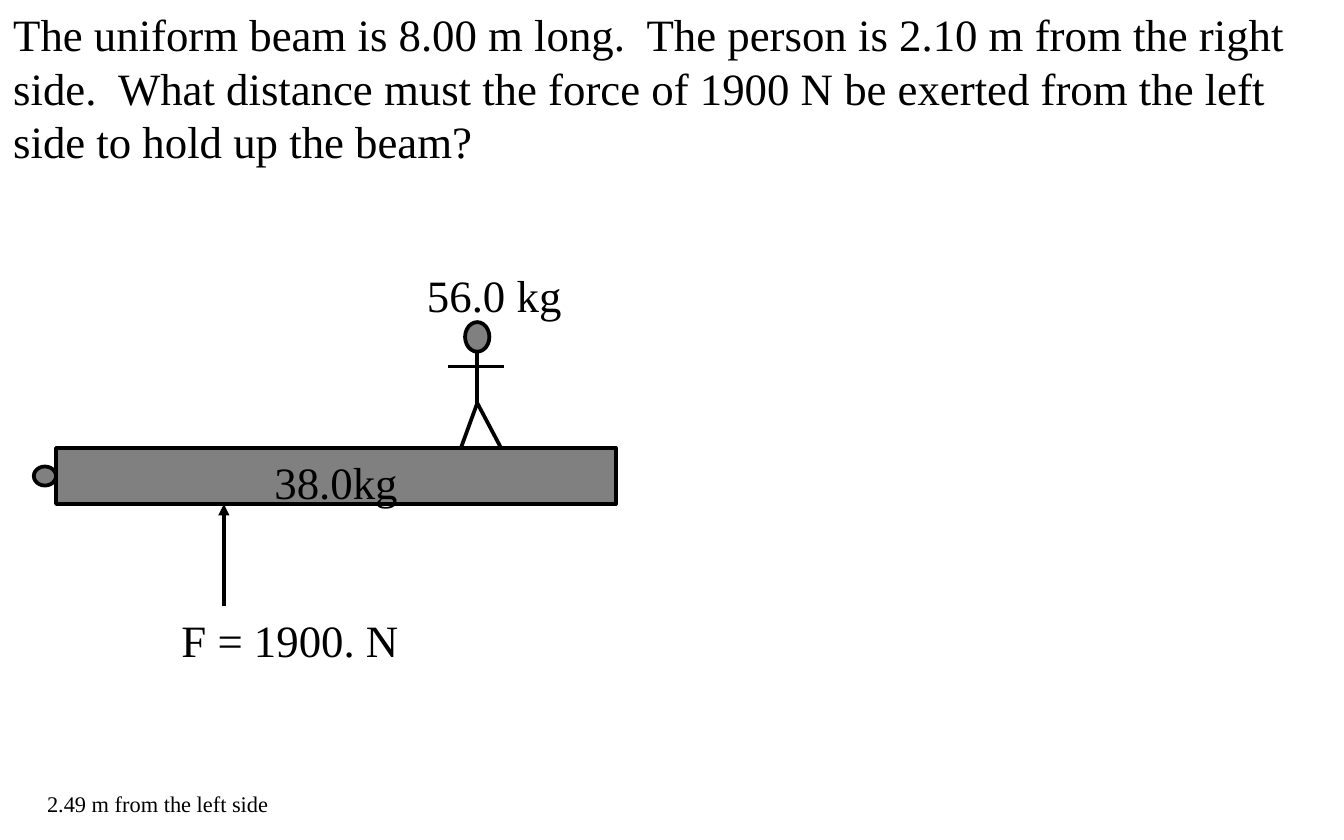
from dataclasses import dataclass

from lxml.etree import SubElement
from pptx import Presentation
from pptx.dml.color import RGBColor
from pptx.enum.shapes import MSO_CONNECTOR, MSO_SHAPE
from pptx.enum.text import MSO_ANCHOR, MSO_AUTO_SIZE, PP_ALIGN
from pptx.oxml.ns import qn
from pptx.shapes.autoshape import Shape
from pptx.shapes.shapetree import GroupShapes
from pptx.util import Cm, Pt

BLACK = RGBColor(0x00, 0x00, 0x00)
GRAY = RGBColor(0x80, 0x80, 0x80)
FONT = "Times New Roman"
OUTLINE = Pt(2)


@dataclass(frozen=True)
class Solid:
    """A filled, outlined shape; lengths in centimetres."""
    kind: MSO_SHAPE
    left: float
    top: float
    width: float
    height: float


@dataclass(frozen=True)
class Stroke:
    """A straight line; lengths in centimetres."""
    x1: float
    y1: float
    x2: float
    y2: float
    arrow: bool = False


@dataclass(frozen=True)
class Label:
    """A text box; lengths in centimetres, size in points."""
    text: str
    left: float
    top: float
    width: float
    height: float
    size: int = 24
    wrap: bool = True


BEAM_LEFT, BEAM_TOP, BEAM_WIDTH, BEAM_HEIGHT = 1.06, 8.47, 10.58, 1.06
BEAM_BOTTOM = BEAM_TOP + BEAM_HEIGHT
PERSON_X, HIP_Y, NECK_Y, ARM_Y = 9.02, 7.62, 6.65, 6.93
HEAD_WIDTH, HEAD_HEIGHT = 0.46, 0.56
PIVOT_WIDTH, PIVOT_HEIGHT = 0.42, 0.36
FORCE_X, FORCE_BOTTOM = 4.23, 11.46

BEAM = Solid(MSO_SHAPE.RECTANGLE, BEAM_LEFT, BEAM_TOP, BEAM_WIDTH, BEAM_HEIGHT)
HEAD = Solid(MSO_SHAPE.OVAL, PERSON_X - HEAD_WIDTH / 2, NECK_Y - HEAD_HEIGHT,
             HEAD_WIDTH, HEAD_HEIGHT)
PIVOT = Solid(MSO_SHAPE.OVAL, BEAM_LEFT - PIVOT_WIDTH,
              BEAM_TOP + (BEAM_HEIGHT - PIVOT_HEIGHT) / 2, PIVOT_WIDTH, PIVOT_HEIGHT)

FORCE = Stroke(FORCE_X, FORCE_BOTTOM, FORCE_X, BEAM_BOTTOM, arrow=True)
LEFT_LEG = Stroke(8.71, BEAM_TOP, PERSON_X, HIP_Y)
RIGHT_LEG = Stroke(9.47, BEAM_TOP, PERSON_X, HIP_Y)
TORSO = Stroke(PERSON_X, HIP_Y, PERSON_X, NECK_Y)
ARMS = Stroke(8.47, ARM_Y, 9.53, ARM_Y)

PERSON_MASS = Label("56.0 kg", 7.82, 4.93, 3.07, 1.27, wrap=False)
FORCE_LABEL = Label("F = 1900. N", 3.18, FORCE_BOTTOM, 4.65, 1.27)
QUESTION = Label(
    "The uniform beam is 8.00 m long.  The person is 2.10 m from the right side.  "
    "What distance must the force of 1900 N be exerted from the left side to hold "
    "up the beam?", 0, 0, 25.4, 3.33)
ANSWER = Label("2.49 m from the left side", 0.64, 14.81, 4.75, 0.76, size=12, wrap=False)


def write(shape: Shape, text: str, size: int, align: PP_ALIGN = PP_ALIGN.LEFT) -> None:
    para = shape.text_frame.paragraphs[0]
    para.alignment = align
    span = para.add_run()
    span.text = text
    span.font.name = FONT
    span.font.size = Pt(size)
    span.font.color.rgb = BLACK


def draw_solid(shapes: GroupShapes, solid: Solid) -> Shape:
    shape = shapes.add_shape(solid.kind, Cm(solid.left), Cm(solid.top),
                             Cm(solid.width), Cm(solid.height))
    shape.shadow.inherit = False
    shape.fill.solid()
    shape.fill.fore_color.rgb = GRAY
    shape.line.color.rgb = BLACK
    shape.line.width = OUTLINE
    return shape


def draw_stroke(shapes: GroupShapes, stroke: Stroke) -> None:
    line = shapes.add_connector(MSO_CONNECTOR.STRAIGHT, Cm(stroke.x1), Cm(stroke.y1),
                                Cm(stroke.x2), Cm(stroke.y2))
    line.line.color.rgb = BLACK
    line.line.width = OUTLINE
    if stroke.arrow:
        SubElement(line.line._get_or_add_ln(), qn("a:tailEnd"), type="triangle")
    SubElement(line._element.spPr, qn("a:effectLst"))


def draw_label(shapes: GroupShapes, label: Label) -> None:
    box = shapes.add_textbox(Cm(label.left), Cm(label.top),
                             Cm(label.width), Cm(label.height))
    box.text_frame.word_wrap = label.wrap
    box.text_frame.auto_size = MSO_AUTO_SIZE.SHAPE_TO_FIT_TEXT
    write(box, label.text, label.size)


def main() -> None:
    deck = Presentation()
    deck.slide_width, deck.slide_height = Cm(25.4), Cm(15.88)
    page = deck.slides.add_slide(deck.slide_layouts[6])

    diagram = page.shapes.add_group_shape().shapes
    beam = draw_solid(diagram, BEAM)
    beam.text_frame.vertical_anchor = MSO_ANCHOR.TOP
    write(beam, "38.0kg", 24, PP_ALIGN.CENTER)
    for stroke in (FORCE, LEFT_LEG, RIGHT_LEG, TORSO):
        draw_stroke(diagram, stroke)
    draw_solid(diagram, HEAD)
    draw_stroke(diagram, ARMS)
    for label in (PERSON_MASS, FORCE_LABEL):
        draw_label(diagram, label)
    draw_solid(diagram, PIVOT)

    for label in (QUESTION, ANSWER):
        draw_label(page.shapes, label)
    deck.save("out.pptx")


if __name__ == "__main__":
    main()
